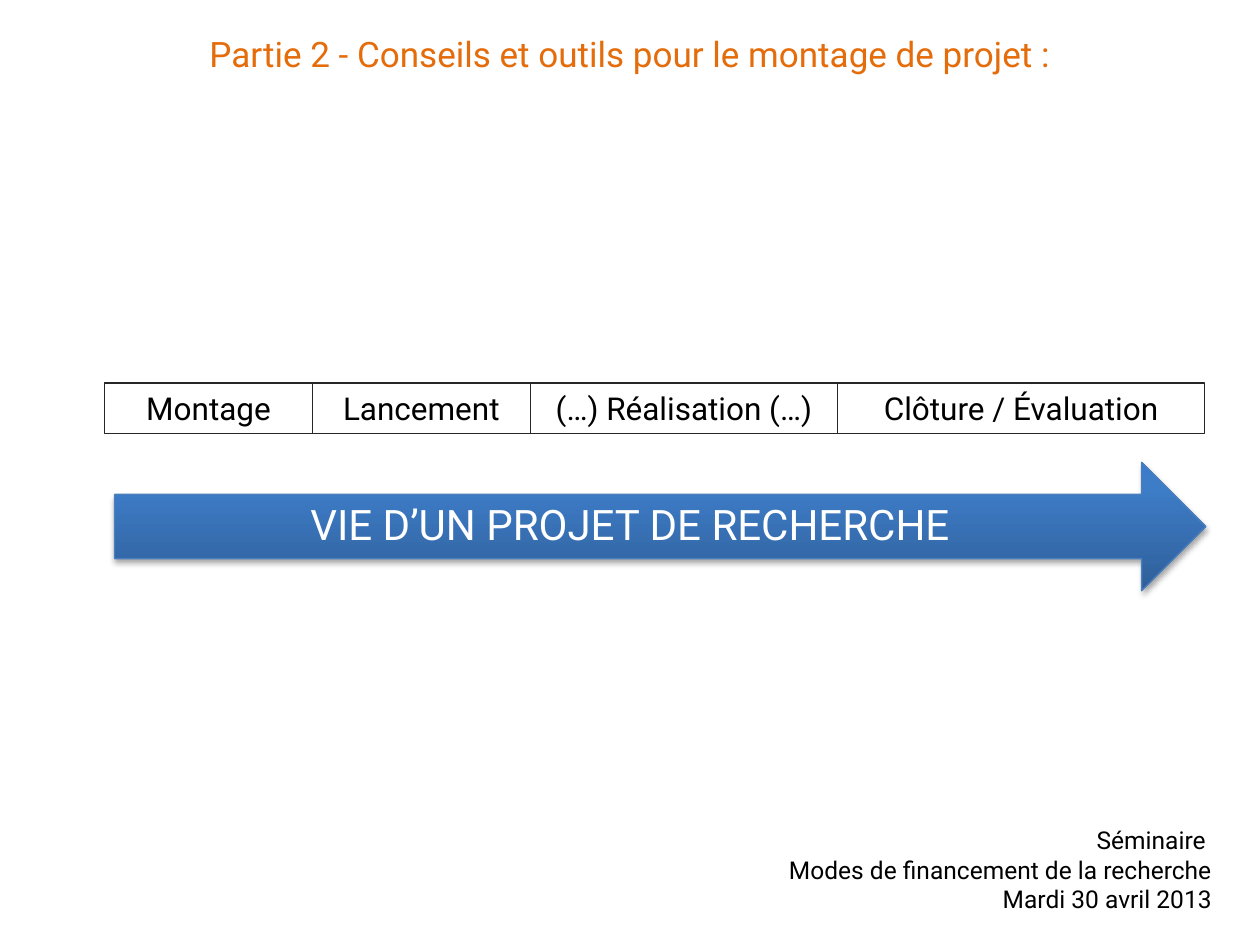
from copy import deepcopy

from lxml.etree import SubElement
from pptx import Presentation
from pptx.dml.color import RGBColor
from pptx.enum.shapes import MSO_SHAPE
from pptx.enum.text import MSO_ANCHOR, MSO_AUTO_SIZE, PP_ALIGN
from pptx.oxml.ns import qn
from pptx.util import Cm, Pt

FONT = "Roboto"
PHASES = [
    ("Montage", 4.19),
    ("Lancement", 4.39),
    ("(…) Réalisation (…)", 6.2),
    ("Clôture / Évaluation", 7.39),
]


def color(value):
    return RGBColor.from_string(value)


def write(shape, text, size=18, ink="000000", align=PP_ALIGN.CENTER,
          anchor=MSO_ANCHOR.TOP, fit=MSO_AUTO_SIZE.NONE):
    """Fill a shape with text, one paragraph per line."""
    frame = shape.text_frame
    frame.text = text
    frame.word_wrap = True
    frame.auto_size = fit
    frame.vertical_anchor = anchor
    for para in frame.paragraphs:
        para.alignment = align
        for span in para.runs:
            span.font.name = FONT
            span.font.size = Pt(size)
            span.font.color.rgb = color(ink)


def add_label(page, text, left, top, width, height, **style):
    box = page.shapes.add_textbox(Cm(left), Cm(top), Cm(width), Cm(height))
    write(box, text, fit=MSO_AUTO_SIZE.SHAPE_TO_FIT_TEXT, **style)


def add_panel(page, kind, left, top, width, height, line):
    shape = page.shapes.add_shape(kind, Cm(left), Cm(top), Cm(width), Cm(height))
    shape.line.color.rgb = color(line)
    shape.line.width = Pt(0.75)
    shape.shadow.inherit = False
    return shape


def set_gradient(shape, stops, angle):
    """Apply (position, colour) stops along the given angle."""
    shape.fill.gradient()
    shape.fill.gradient_angle = angle
    stop_list = shape.element.spPr.find(".//" + qn("a:gsLst"))
    while len(stop_list) < len(stops):
        stop_list.append(deepcopy(stop_list[-1]))
    for stop, (position, value) in zip(shape.fill.gradient_stops, stops):
        stop.position = position
        stop.color.rgb = color(value)


def add_shadow(shape, blur, distance, opacity):
    """Cast a soft black shadow straight down."""
    effects = shape.element.spPr.find(qn("a:effectLst"))
    shadow = SubElement(effects, qn("a:outerShdw"), blurRad=str(Pt(blur)),
                        dist=str(Pt(distance)), dir="5400000", rotWithShape="0")
    black = SubElement(shadow, qn("a:srgbClr"), val="000000")
    SubElement(black, qn("a:alpha"), val=str(opacity * 1000))


def add_title(page, text):
    title = page.shapes.title
    title.left, title.top = Cm(1.27), Cm(0.53)
    title.width, title.height = Cm(22.86), Cm(16.41)
    write(title, text, size=20, ink="E46C0A")


def add_life_arrow(page):
    arrow = add_panel(page, MSO_SHAPE.RIGHT_ARROW, 2.31, 9.32, 22, 2.59, "4B7EBC")
    set_gradient(arrow, [(0, "2F5F99"), (0.8, "3D7CC7"), (1, "3A7CCB")], 90)
    add_shadow(arrow, blur=3.1, distance=1.8, opacity=35)
    add_label(page, "VIE D’UN PROJET DE RECHERCHE", 3.3, 9.93, 18.8, 1.27,
              size=24, ink="FFFFFF")


def add_phases(page, left, top, height):
    """Lay the phases side by side."""
    for name, width in PHASES:
        phase = add_panel(page, MSO_SHAPE.RECTANGLE, left, top, width, height, "262626")
        phase.fill.background()
        write(phase, name, fit=MSO_AUTO_SIZE.SHAPE_TO_FIT_TEXT)
        left += width


def main():
    deck = Presentation()
    deck.slide_width, deck.slide_height = Cm(25.4), Cm(19.05)
    page = deck.slides.add_slide(deck.slide_layouts[5])

    # Seminar details, bottom right
    add_label(page, "Séminaire \nModes de financement de la recherche\nMardi 30 avril 2013",
              15.49, 16.51, 9.19, 2.06, size=14, align=PP_ALIGN.RIGHT)

    # Heading and project timeline
    add_title(page, "Partie 2 - Conseils et outils pour le montage de projet :")
    add_life_arrow(page)
    add_phases(page, left=2.11, top=7.72, height=1.02)

    deck.save("out.pptx")


if __name__ == "__main__":
    main()
